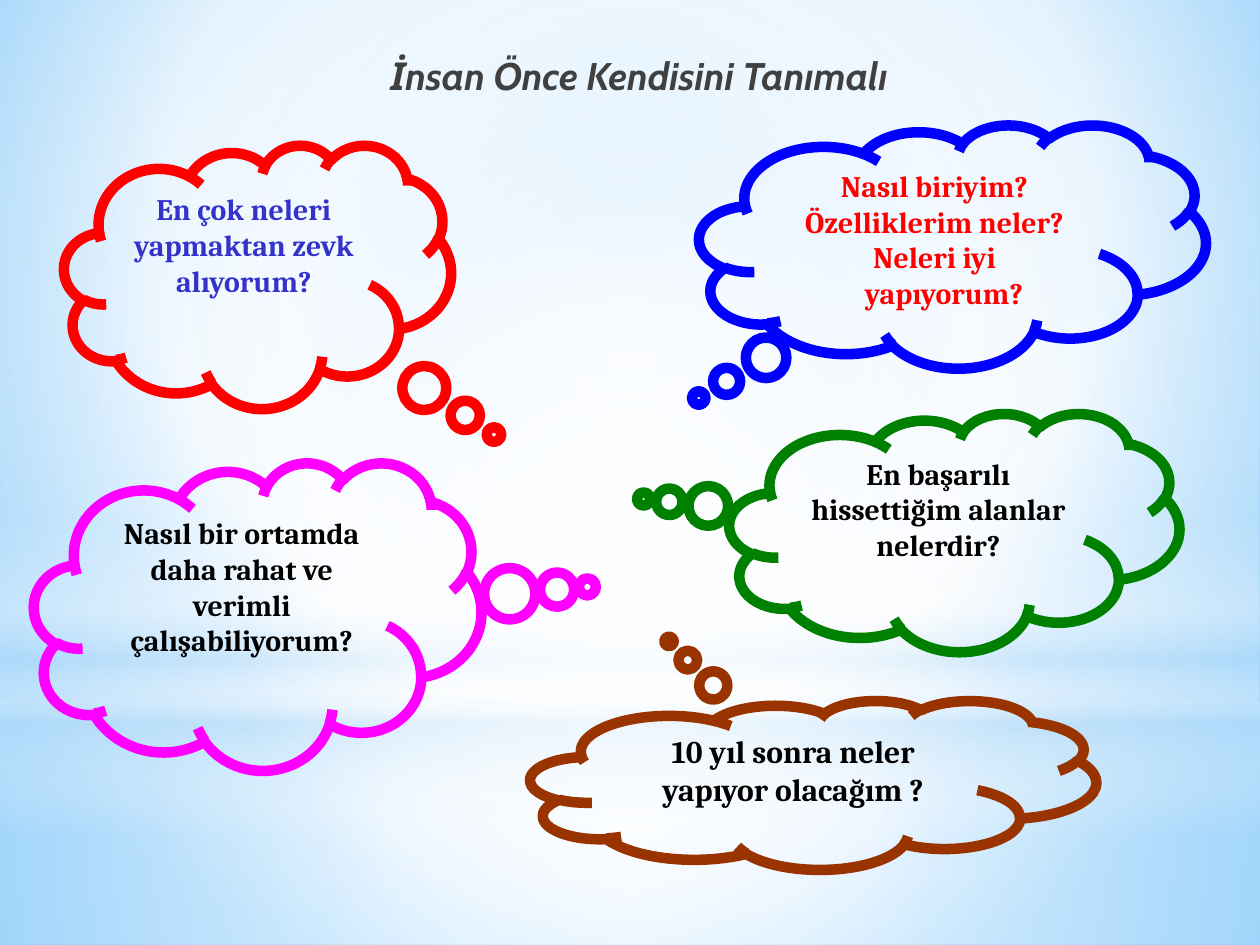
from pptx import Presentation
from pptx import util as u
from pptx.dml import color
from pptx.enum import shapes, text
from pptx.oxml import parse_xml
from pptx.oxml import ns

COLORS = {
    "white": "FFFFFF", "mist": "B4DCFA", "sky": "9ED5FF", "azure": "5BB9FF",
    "gray": "404040", "indigo": "3333CC", "black": "000000", "red": "FF0000",
    "magenta": "FF00FF", "brown": "993300", "green": "008000", "blue": "0000FF",
}


def apply_gradient(fill, properties, stops, center):
    fill.background()
    stop_xml = "".join(
        f'<a:gs pos="{position * 1000}"><a:srgbClr val="{COLORS[name]}">'
        f'<a:alpha val="{alpha * 1000}"/></a:srgbClr></a:gs>'
        for position, name, alpha in stops
    )
    if center:
        sides = " ".join(f'{side}="{value * 1000}"' for side, value in zip("ltrb", center))
        direction = f'<a:path path="circle"><a:fillToRect {sides}/></a:path>'
    else:
        direction = '<a:lin ang="5400000" scaled="0"/>'
    gradient = parse_xml(
        f'<a:gradFill {ns.nsdecls("a")} rotWithShape="1">'
        f"<a:gsLst>{stop_xml}</a:gsLst>{direction}</a:gradFill>"
    )
    properties.replace(properties.find(ns.qn("a:noFill")), gradient)


def write_paragraph(paragraph, words, color_name, font_format):
    run = paragraph.add_run()
    run.text = words
    for name, value in font_format.items():
        setattr(run.font, name, value)
    run.font.color.rgb = color.RGBColor.from_string(COLORS[color_name])


presentation = Presentation()
presentation.slide_width = u.Inches(10)
presentation.slide_height = u.Inches(7.5)
slide = presentation.slides.add_slide(presentation.slide_layouts[1])

background_fill = slide.background.fill
background_fill.background()
apply_gradient(
    background_fill, slide.element.find(".//" + ns.qn("p:bgPr")),
    [(0, "sky", 100), (60, "white", 100), (100, "azure", 100)], (20, 10, 20, 60),
)

RECTANGLE = shapes.MSO_SHAPE.RECTANGLE
MIDDLE = (50, 50, 50, 50)
backdrops = [
    (RECTANGLE, 5.58, 1.92, [(0, "white", 91), (37, "white", 76), (100, "mist", 79)], MIDDLE),
    (RECTANGLE, 0, 5.58, [(0, "white", 89), (48, "white", 62), (100, "mist", 79)], MIDDLE),
    (RECTANGLE, 4.12, 2.5, [(0, "white", 0), (29, "white", 30), (45, "mist", 40),
                            (55, "white", 26), (65, "mist", 60), (100, "white", 0)], None),
    (shapes.MSO_SHAPE.OVAL, 1.75, 5.58, [(0, "white", 100), (56, "white", 0)], MIDDLE),
]
for kind, top, height, stops, center in backdrops:
    shape = slide.shapes.add_shape(kind, 0, u.Inches(top), u.Inches(10), u.Inches(height))
    shape.shadow.inherit = False
    shape.line.fill.background()
    apply_gradient(shape.fill, shape.element.spPr, stops, center)

title = slide.shapes.title
title.element.getparent().remove(title.element)

heading = slide.placeholders[1]
heading.element.getparent().append(heading.element)
heading_box = {"left": 0, "top": 0, "width": 10, "height": 7.5}
for name, value in heading_box.items():
    setattr(heading, name, u.Inches(value))
heading_frame = heading.text_frame
heading_format = {
    "word_wrap": True, "auto_size": text.MSO_AUTO_SIZE.NONE,
    "vertical_anchor": text.MSO_ANCHOR.TOP, "margin_top": u.Inches(0.41),
}
for name, value in heading_format.items():
    setattr(heading_frame, name, value)
paragraph = heading_frame.paragraphs[0]
paragraph.space_before = u.Pt(0)
paragraph.space_after = u.Pt(3)
properties = paragraph._p.get_or_add_pPr()
properties.set("marL", str(u.Inches(3)))
properties.set("indent", "0")
properties.append(parse_xml(f'<a:buNone {ns.nsdecls("a")}/>'))
write_paragraph(paragraph, "İnsan Önce Kendisini Tanımalı", "gray",
                {"name": "Cabin", "size": u.Pt(22), "bold": True, "italic": True})

clouds = [
    ((0.51, 1.15, 3.07, 2.09), (0.611, 0.6), "red", "indigo", 17,
     ["En çok neleri yapmaktan zevk alıyorum?"]),
    ((0.27, 3.67, 3.55, 2.44), (0.737, -0.095), "magenta", "black", 17,
     ["Nasıl bir ortamda daha rahat ve verimli çalışabiliyorum?"]),
    ((4.21, 5.56, 4.49, 1.34), (-0.255, -0.85), "brown", "black", 18,
     ["10 yıl sonra neler yapıyor olacağım ?"]),
    ((5.79, 3.28, 3.57, 1.89), (-0.691, -0.14), "green", "black", 17,
     ["En başarılı hissettiğim alanlar nelerdir?"]),
    ((5.55, 0.99, 4.02, 1.93), (-0.501, 0.624), "blue", "red", 17,
     ["Nasıl biriyim? Özelliklerim neler? Neleri iyi", "yapıyorum?"]),
]
cloud_format = {
    "word_wrap": True, "vertical_anchor": text.MSO_ANCHOR.TOP,
    "margin_left": u.Inches(0.1), "margin_right": u.Inches(0.1),
    "margin_top": u.Inches(0.05), "margin_bottom": u.Inches(0.05),
}
for box, tail, outline, ink, size, lines in clouds:
    shape = slide.shapes.add_shape(shapes.MSO_SHAPE.CLOUD_CALLOUT, *map(u.Inches, box))
    shape.shadow.inherit = False
    shape.adjustments[0], shape.adjustments[1] = tail
    shape.fill.background()
    shape.line.color.rgb = color.RGBColor.from_string(COLORS[outline])
    shape.line.width = u.Pt(6)
    frame = shape.text_frame
    for name, value in cloud_format.items():
        setattr(frame, name, value)
    for index, words in enumerate(lines):
        paragraph = frame.add_paragraph() if index else frame.paragraphs[0]
        paragraph.alignment = text.PP_ALIGN.CENTER
        if index:
            paragraph._p.get_or_add_pPr().set("marL", str(u.Inches(0.15)))
        write_paragraph(paragraph, words, ink,
                        {"name": "Cambria", "size": u.Pt(size), "bold": True})

presentation.save("out.pptx")
